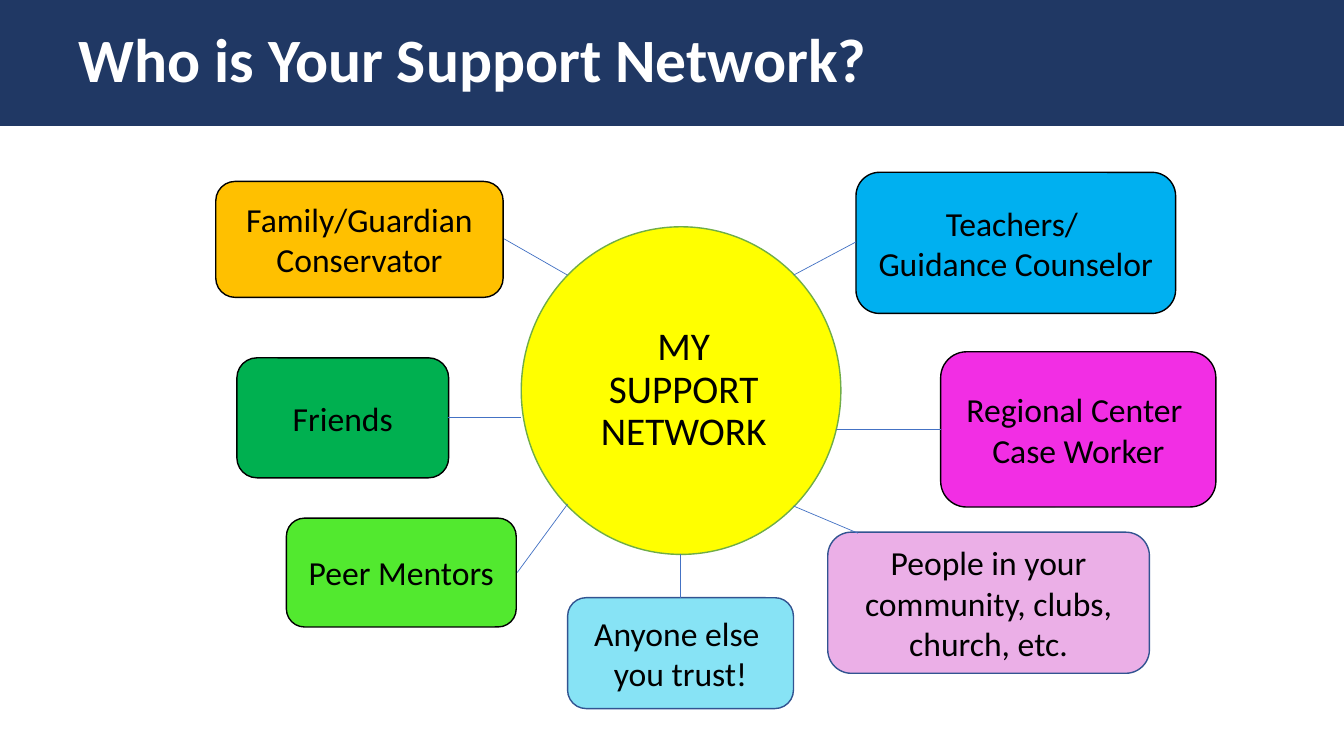
from lxml import etree
from pptx import Presentation
from pptx.dml.color import RGBColor
from pptx.enum.shapes import MSO_CONNECTOR, MSO_SHAPE
from pptx.enum.text import MSO_ANCHOR, MSO_AUTO_SIZE, PP_ALIGN
from pptx.oxml.ns import qn
from pptx.util import Inches, Pt

STRAIGHT = MSO_CONNECTOR.STRAIGHT
RECTANGLE, OVAL, ROUNDED = MSO_SHAPE.RECTANGLE, MSO_SHAPE.OVAL, MSO_SHAPE.ROUNDED_RECTANGLE
MIDDLE = MSO_ANCHOR.MIDDLE
LEFT, CENTER = PP_ALIGN.LEFT, PP_ALIGN.CENTER
NO_FIT = MSO_AUTO_SIZE.NONE

BLACK = RGBColor(0x00, 0x00, 0x00)
WHITE = RGBColor(0xFF, 0xFF, 0xFF)
NAVY = RGBColor(0x20, 0x38, 0x64)
YELLOW = RGBColor(0xFF, 0xFF, 0x00)
LEAF = RGBColor(0x70, 0xAD, 0x47)
ORANGE = RGBColor(0xFF, 0xC0, 0x00)
GREEN = RGBColor(0x00, 0xB0, 0x50)
AQUA = RGBColor(0x87, 0xE3, 0xF5)
LIME = RGBColor(0x52, 0xE9, 0x2F)
PINK = RGBColor(0xEB, 0xAF, 0xE7)
MAGENTA = RGBColor(0xF2, 0x2E, 0xE4)
SKY = RGBColor(0x00, 0xB0, 0xF0)
STEEL = RGBColor(0x32, 0x54, 0x91)
BLUE = RGBColor(0x44, 0x72, 0xC4)

SUPPORTERS = [
    ("Family/Guardian\nConservator", (2.14, 1.8, 2.85, 1.15), ORANGE, BLACK),
    ("Friends", (2.35, 3.55, 2.1, 1.19), GREEN, BLACK),
    ("Anyone else \nyou trust!", (5.63, 5.93, 2.24, 1.1), AQUA, STEEL),
    ("Peer Mentors", (2.84, 5.14, 2.28, 1.08), LIME, BLACK),
    ("People in your community, clubs, church, etc.", (8.21, 5.28, 3.19, 1.4), PINK, STEEL),
    ("Regional Center \nCase Worker", (9.33, 3.49, 2.73, 1.54), MAGENTA, BLACK),
    ("Teachers/ \nGuidance Counselor", (8.49, 1.71, 3.17, 1.4), SKY, BLACK),
]
LINKS = [
    ((5, 2.37), (5.63, 2.73)),
    ((4.44, 4.14), (5.17, 4.14)),
    ((5.13, 5.68), (5.63, 5)),
    ((6.75, 5.5), (6.75, 5.93)),
    ((8.51, 5.29), (7.87, 5.02)),
    ((9.33, 4.26), (8.29, 4.26)),
    ((8.49, 2.4), (7.87, 2.73)),
]


def apply(target, values):
    for name, value in values.items():
        setattr(target, name, value)


class NetworkSlide:
    font = "Calibri"

    def __init__(self, deck):
        self.page = deck.slides.add_slide(deck.slide_layouts[5])

    def label(self, shape, text, size, color=BLACK, bold=False, align=CENTER, spacing=1.0):
        frame = shape.text_frame
        frame.text = text
        apply(frame, {"word_wrap": True, "auto_size": NO_FIT, "vertical_anchor": MIDDLE})
        for para in frame.paragraphs:
            apply(para, {"alignment": align, "line_spacing": spacing})
            for span in para.runs:
                apply(span.font, {"name": self.font, "size": Pt(size), "bold": bold})
                span.font.color.rgb = color

    def title(self, text, place):
        title = self.page.shapes.title
        apply(title, dict(zip(("left", "top", "width", "height"), map(Inches, place))))
        self.label(title, text, 44, WHITE, True, LEFT, 0.9)

    def shape(self, kind, place, fill, outline=None):
        shape = self.page.shapes.add_shape(kind, *map(Inches, place))
        shape.shadow.inherit = False
        shape.fill.solid()
        shape.fill.fore_color.rgb = fill
        if outline is None:
            shape.line.fill.background()
        else:
            shape.line.color.rgb = outline
            shape.line.width = Pt(1)
        return shape

    def banner(self, place):
        banner = self.shape(RECTANGLE, place, NAVY)
        self.page.shapes.title._element.addprevious(banner._element)

    def hub(self, text, place):
        hub = self.shape(OVAL, place, YELLOW, LEAF)
        self.label(hub, text, 28, spacing=0.9)
        hub.text_frame.margin_left = Inches(0.15)

    def supporter(self, text, place, fill, outline):
        self.label(self.shape(ROUNDED, place, fill, outline), text, 24)

    def link(self, start, end):
        link = self.page.shapes.add_connector(STRAIGHT, *map(Inches, start + end))
        link.line.color.rgb = BLUE
        link.line.width = Pt(0.5)
        etree.SubElement(link._element.spPr, qn("a:effectLst"))


def main():
    deck = Presentation()
    apply(deck, {"slide_width": Inches(13.33), "slide_height": Inches(7.5)})
    slide = NetworkSlide(deck)
    slide.banner((0, 0, 13.33, 1.25))
    slide.title("Who is Your Support Network?", (0.68, 0, 11.13, 1.25))
    slide.hub("MY SUPPORT NETWORK", (5.17, 2.25, 3.17, 3.25))
    for supporter in SUPPORTERS:
        slide.supporter(*supporter)
    for start, end in LINKS:
        slide.link(start, end)
    deck.save("out.pptx")


if __name__ == "__main__":
    main()
